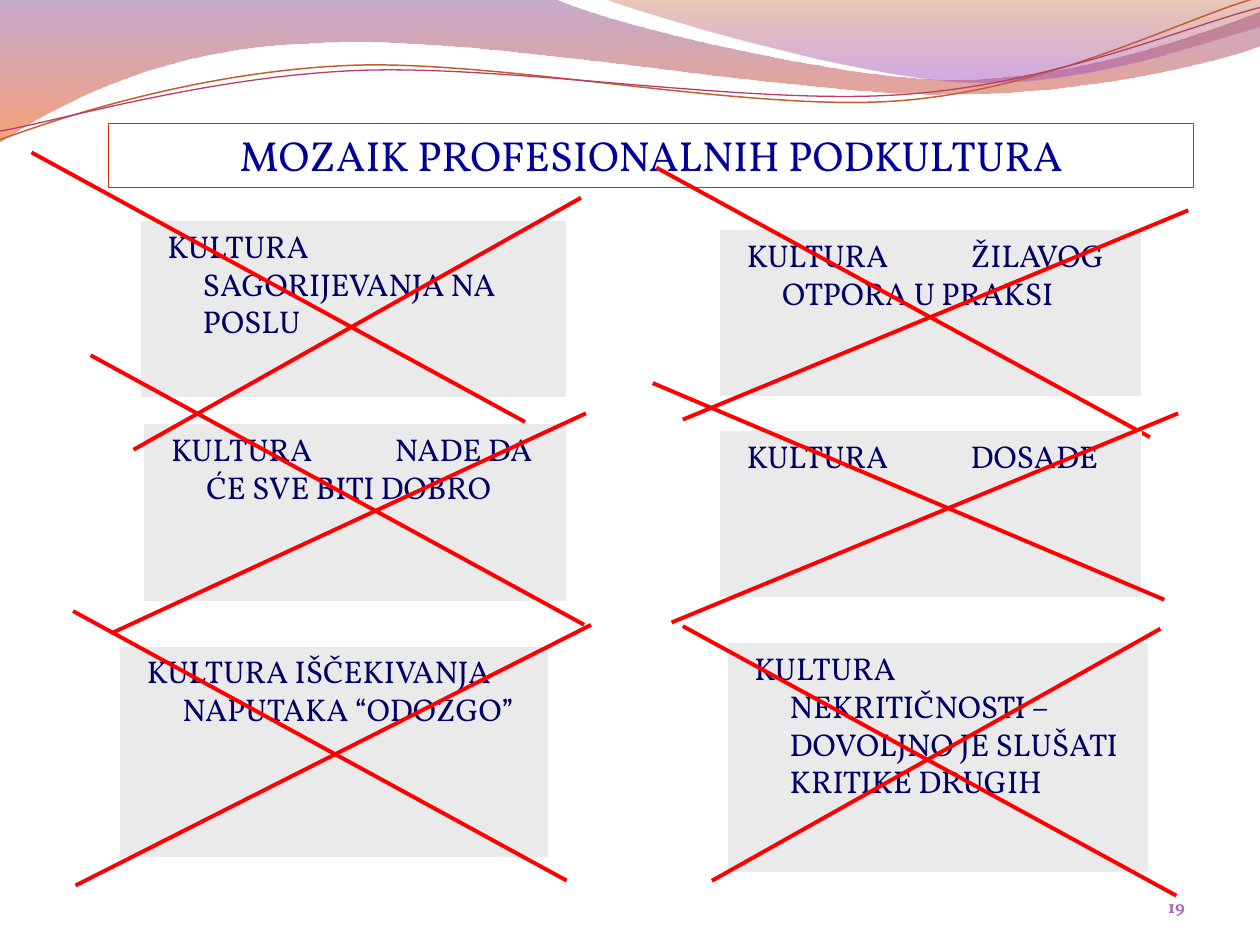
import math

import pptx
import pptx.dml.color
import pptx.enum.shapes
import pptx.enum.text
import pptx.oxml
import pptx.oxml.ns
import pptx.util

Pt = pptx.util.Pt
RGB = pptx.dml.color.RGBColor
ALIGN = pptx.enum.text.PP_ALIGN
RECT = pptx.enum.shapes.MSO_SHAPE.RECTANGLE
STRAIGHT = pptx.enum.shapes.MSO_CONNECTOR.STRAIGHT
qn = pptx.oxml.ns.qn
A_NS = pptx.oxml.ns.nsdecls("a")

WHITE = RGB(0xFF, 0xFF, 0xFF)
GREY = RGB(0xEA, 0xEA, 0xEA)
NAVY = RGB(0x00, 0x00, 0x66)
BLUE = RGB(0x00, 0x00, 0x99)
RED = RGB(0xFF, 0x00, 0x00)
RUST = RGB(0xCC, 0x33, 0x00)
LILAC = RGB(0xAC, 0x66, 0xBB)
COPPER = RGB(0xC4, 0x5F, 0x30)
PINK = RGB(0xB8, 0x3D, 0x68)
PLUM = RGB(0x83, 0x45, 0x91)
ORANGE = RGB(0xF3, 0x53, 0x07)
BROWN = RGB(0xB7, 0x49, 0x15)
VIOLET = RGB(0xA1, 0x4B, 0xB4)

FONT = "Vollkorn"
WORD_GAP = 43.4
WAVE_TILT = 357.3

# Each step after the start is a point (2 numbers) or a Bezier curve (6 numbers).
# Bands: steps, then gradient stops as (percent, colour, opacity percent).
BANDS = [
    ([(0, 0), (316.8, -0.7), (342.7, 12.2, 478.1, 45.4, 545.8, 45.4),
      (614.2, 45.4, 689.8, 18.7, 720, 6.5), (720.7, 25.9),
      (707.8, 31.7, 626.4, 54.7, 537.1, 54), (447.8, 54, 275, 20.2, 185, 24.5),
      (92.9, 25.9, 33.1, 59.8, -0.7, 81.4)],
     [(0, PLUM, 45), (100, ORANGE, 55)]),
    ([(344.9, -0.7), (366.5, 7.9, 491, 44.6, 553.7, 46.8),
      (617, 49.7, 691.9, 23, 720, 15.1), (720, 0)],
     [(0, BROWN, 30), (80, VIOLET, 45)]),
]
# Waves: steps, centre of the tilt, colour, width.
WAVES = [
    ([(0, 79.9), (34.6, 67, 113.8, 41, 199.4, 37.4), (284.4, 33.8, 427, 64.1, 513.4, 57.6),
      (599.8, 51.1, 675.4, 10.8, 718.6, -1.4)], (359.3, 41.4), COPPER, 0.85),
    ([(0, 74.9), (33.8, 69.1, 118.1, 43.9, 203.8, 40.3), (290.2, 36.7, 429.8, 60.5, 516.2, 54),
      (601.9, 48.2, 677.5, 15.1, 720, 4.3)], (359.6, 42.5), PINK, 0.75),
]

# Box, then the words; a second part stands after a wide gap.
CULTURES = [
    ((80, 126, 244, 101.5), ["KULTURA SAGORIJEVANJA NA POSLU"]),
    ((411.1, 131.2, 241.2, 95.6), ["KULTURA", "ŽILAVOG OTPORA U PRAKSI"]),
    ((82.1, 242.1, 241.9, 101.5), ["KULTURA", "NADE DA ĆE SVE BITI DOBRO"]),
    ((415.4, 367.3, 241.2, 131.6),
     ["KULTURA", "NEKRITIČNOSTI – DOVOLJNO JE SLUŠATI KRITIKE DRUGIH"]),
    ((68.3, 369.3, 245.5, 120.8), ["KULTURA IŠČEKIVANJA NAPUTAKA “ODOZGO”"]),
]
BOREDOM = ((411.1, 246.2, 241.2, 95.6), ["KULTURA", "DOSADE"])

RISING = [(76.3, 257, 332, 113), (43.2, 506, 337.7, 357.1),
          (390.2, 239.8, 679, 120.2), (63.4, 362, 334.8, 236.2),
          (406.8, 503.3, 663.1, 359.3)]
FALL_STARTS = [(390.2, 357.8), (18, 87.1), (375.1, 95.8), (51.8, 203), (41.8, 349.2)]
FALL = (282, 154)
BOREDOM_CROSS = [(383.8, 355.7, 673.2, 236.2), (665.3, 342.7, 373, 218.9)]


def turn(step, centre, degrees):
    """Turn every x, y pair of a step around the centre."""
    cos, sin = math.cos(math.radians(degrees)), math.sin(math.radians(degrees))
    cx, cy = centre
    turned = []
    for x, y in zip(step[::2], step[1::2]):
        dx, dy = x - cx, y - cy
        turned += [cx + dx * cos - dy * sin, cy + dx * sin + dy * cos]
    return turned


class Slide:
    def __init__(self, prs):
        self.s = prs.slides.add_slide(prs.slide_layouts[6])
        self.shapes = self.s.shapes

    def outline(self, steps, closed):
        """Draw all points as segments, then join triples into Bezier curves."""
        points = [(Pt(x), Pt(y)) for step in steps for x, y in zip(step[::2], step[1::2])]
        builder = self.shapes.build_freeform(*points[0])
        builder.add_line_segments(points[1:], close=closed)
        sp = builder.convert_to_shape()
        sp.shadow.inherit = False
        segments = iter(list(sp.element.iter(qn("a:lnTo"))))
        for step in steps[1:]:
            first = next(segments)
            if len(step) == 6:
                first.tag = qn("a:cubicBezTo")
                for _ in range(2):
                    extra = next(segments)
                    first.append(extra[0])
                    extra.getparent().remove(extra)
        sp.fill.background()
        return sp

    def band(self, steps, stops):
        """Closed area with a see-through gradient from top to bottom."""
        sp = self.outline(steps, True)
        sp.line.fill.background()
        gs = "".join(
            f'<a:gs pos="{pos * 1000}"><a:srgbClr val="{color}">'
            f'<a:alpha val="{alpha * 1000}"/></a:srgbClr></a:gs>'
            for pos, color, alpha in stops)
        grad = pptx.oxml.parse_xml(
            f'<a:gradFill {A_NS} rotWithShape="1"><a:gsLst>{gs}</a:gsLst>'
            f'<a:lin ang="5400000" scaled="0"/></a:gradFill>')
        props = sp.element.spPr
        props.replace(props.find(qn("a:noFill")), grad)

    def wave(self, steps, centre, color, width):
        level = [turn(step, centre, -WAVE_TILT) for step in steps]
        sp = self.outline(level, False)
        sp.rotation = WAVE_TILT
        self.stroke(sp, color, width)

    def stroke(self, sp, color, width):
        sp.line.color.rgb = color
        sp.line.width = Pt(width)

    def text(self, sp, parts, align, **font):
        tf = sp.text_frame
        tf.word_wrap = True
        tf.vertical_anchor = pptx.enum.text.MSO_ANCHOR.TOP
        p = tf.paragraphs[0]
        p.alignment = align
        for i, part in enumerate(parts):
            if i:
                gap = self.run(p, " ", font)
                gap.font._element.set("spc", str(round(WORD_GAP * 100)))
            self.run(p, part, font)
        return p

    def run(self, p, words, font):
        r = p.add_run()
        r.text = words
        r.font.color.rgb = font["color"]
        for name, value in {"name": FONT, "size": Pt(font["size"]),
                            "bold": font.get("bold", False)}.items():
            setattr(r.font, name, value)
        return r

    def rect(self, box, line):
        sp = self.shapes.add_shape(RECT, *map(Pt, box))
        sp.shadow.inherit = False
        sp.fill.background()
        self.stroke(sp, line, 0.75)
        return sp

    def title(self, box, words):
        self.text(self.rect(box, RUST), [words], ALIGN.CENTER, size=24, color=BLUE)

    def culture(self, box, parts):
        sp = self.rect(box, WHITE)
        sp.fill.solid()
        sp.fill.fore_color.rgb = GREY
        p = self.text(sp, parts, ALIGN.LEFT, size=18, color=NAVY)
        props = p._p.get_or_add_pPr()
        for name, value in {"marL": Pt(28.8), "indent": Pt(-20.2)}.items():
            props.set(name, str(value))

    def strike(self, *ends):
        line = self.shapes.add_connector(STRAIGHT, *map(Pt, ends))
        self.stroke(line, RED, 2.25)
        line._element.spPr.append(pptx.oxml.parse_xml(f"<a:effectLst {A_NS}/>"))

    def number(self, box, words):
        self.text(self.shapes.add_textbox(*map(Pt, box)), [words], ALIGN.RIGHT,
                  size=10, color=LILAC, bold=True)


def main():
    prs = pptx.Presentation()
    prs.slide_width, prs.slide_height = Pt(720), Pt(540)
    s = Slide(prs)
    for band in BANDS:
        s.band(*band)
    for wave in WAVES:
        s.wave(*wave)
    s.number((634.3, 508.3, 49.7, 20.9), "19")
    s.culture(*CULTURES[0])
    s.title((61.9, 70.4, 620.2, 36.6), "MOZAIK PROFESIONALNIH PODKULTURA")
    for culture in CULTURES[1:]:
        s.culture(*culture)
    for ends in RISING:
        s.strike(*ends)
    for x, y in FALL_STARTS:
        s.strike(x + FALL[0], y + FALL[1], x, y)
    s.culture(*BOREDOM)
    for ends in BOREDOM_CROSS:
        s.strike(*ends)
    prs.save("out.pptx")


if __name__ == "__main__":
    main()
